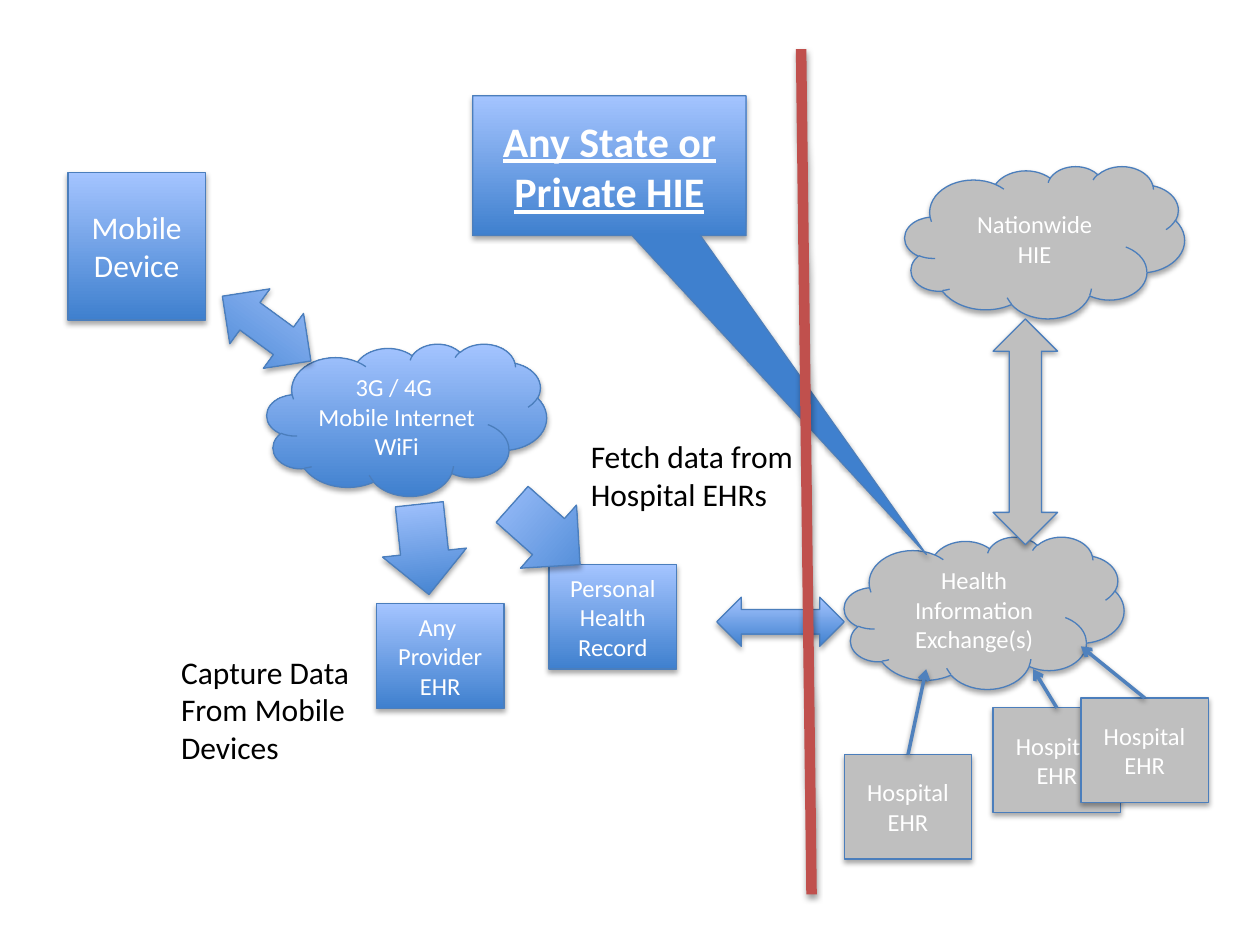
"""Build a slide that maps how mobile devices and hospitals share health records."""
from lxml.etree import SubElement
from pptx import Presentation
from pptx.dml.color import RGBColor
from pptx.enum.shapes import MSO_CONNECTOR as Link, MSO_SHAPE as Kind
from pptx.enum.text import MSO_ANCHOR as Anchor, MSO_AUTO_SIZE as Fit, PP_ALIGN as Align
from pptx.oxml.ns import qn
from pptx.util import Cm, Pt

WHITE = RGBColor(0xFF, 0xFF, 0xFF)
BLACK = RGBColor(0x00, 0x00, 0x00)
GRAY = RGBColor(0xBF, 0xBF, 0xBF)
DEEP = RGBColor(0x3F, 0x80, 0xCE)
PALE = RGBColor(0xA4, 0xC4, 0xFF)
EDGE = RGBColor(0x4B, 0x7E, 0xBC)
BLUE = RGBColor(0x4F, 0x81, 0xBD)
RED = RGBColor(0xC0, 0x50, 0x4D)

BOX = (2.57, 2.11)
CLOUD = (5.64, 3.07)
ARROW = (1.7, 1.83)


def write(frame, text, size=14, color=WHITE, align=Align.CENTER, bold=False, under=False):
    frame.text = text
    for para in frame.paragraphs:
        para.alignment = align
        font = para.runs[0].font
        font.name, font.size, font.color.rgb = "Calibri", Pt(size), color
        font.bold, font.underline = bold, under


def shade(item, alpha, dist):
    effects = SubElement(item._element.spPr, qn("a:effectLst"))
    outer = SubElement(effects, qn("a:outerShdw"), blurRad=str(Pt(3.15)), dist=str(Pt(dist)),
                       dir="5400000", rotWithShape="0")
    black = SubElement(outer, qn("a:srgbClr"), val="000000")
    SubElement(black, qn("a:alpha"), val=str(alpha * 1000))


class Chart:
    def __init__(self, slide):
        self.slide = slide

    def shape(self, kind, spot, area, text="", gray=False, turn=0, adjust=(), **style):
        item = self.slide.shapes.add_shape(kind, *map(Cm, spot + area))
        item.rotation = turn
        for i, value in enumerate(adjust):
            item.adjustments[i] = value
        if gray:
            item.fill.solid()
            item.fill.fore_color.rgb = GRAY
        else:
            item.fill.gradient()
            item.fill.gradient_angle = 90
            for stop, color, place in zip(item.fill.gradient_stops, (DEEP, PALE), (0, 1)):
                stop.color.rgb, stop.position = color, place
        item.line.color.rgb, item.line.width = EDGE, Pt(0.75)
        shade(item, 35, 1.8)
        if text:
            item.text_frame.vertical_anchor = Anchor.MIDDLE
            write(item.text_frame, text, **style)

    def box(self, spot, text, area=BOX, **style):
        self.shape(Kind.RECTANGLE, spot, area, text, **style)

    def cloud(self, spot, text, **style):
        self.shape(Kind.CLOUD, spot, CLOUD, text, **style)

    def arrow(self, spot, turn):
        self.shape(Kind.DOWN_ARROW, spot, ARROW, turn=turn, adjust=(0.57, 0.5))

    def label(self, spot, area, text):
        frame = self.slide.shapes.add_textbox(*map(Cm, spot + area)).text_frame
        frame.word_wrap, frame.auto_size = False, Fit.SHAPE_TO_FIT_TEXT
        write(frame, text, size=18, color=BLACK, align=Align.LEFT)

    def line(self, start, end, color, width, head=False):
        item = self.slide.shapes.add_connector(Link.STRAIGHT, *map(Cm, start + end))
        item.line.color.rgb, item.line.width = color, Pt(width)
        if head:
            SubElement(item.line._get_or_add_ln(), qn("a:tailEnd"), type="arrow")
        shade(item, 38, 1.6)


def main():
    deck = Presentation()
    deck.slide_width, deck.slide_height = Cm(25.4), Cm(19.05)
    chart = Chart(deck.slides.add_slide(deck.slide_layouts[6]))
    wards = {(20.02, 14.27): (20.83, 13.49),
             (21.79, 14.07): (21.79, 13.03),
             (17.02, 15.21): (18.67, 13.49)}

    chart.cloud((5.38, 6.93), "3G / 4G \nMobile Internet\nWiFi")
    chart.box((1.37, 3.48), "Mobile\nDevice", area=(2.77, 2.97), size=18)
    for spot in wards:
        chart.box(spot, "Hospital\nEHR", gray=True)
    chart.box((11.07, 11.38), "Personal\nHealth\nRecord")
    chart.arrow((10.16, 9.86), 311.6)
    chart.label((11.66, 8.69), (4.67, 1.8), "Fetch data from\nHospital EHRs")
    chart.label((3.4, 13.03), (3.96, 2.57), "Capture Data\nFrom Mobile\nDevices")

    chart.cloud((17.02, 10.82), "Health Information\nExchange(s)", gray=True)
    chart.cloud((18.24, 3.35), "Nationwide\nHIE", gray=True)
    for (left, top), end in wards.items():
        chart.line((left + BOX[0] / 2, top), end, BLUE, 2, head=True)
    chart.shape(Kind.LEFT_RIGHT_ARROW, (14.45, 12.04), (2.57, 0.99))
    chart.shape(Kind.UP_DOWN_ARROW, (20.02, 6.43), (1.3, 4.55), gray=True)

    chart.box((7.59, 12.17), "Any \nProvider\nEHR")
    chart.arrow((7.7, 10.16), 353.9)
    chart.shape(Kind.RECTANGULAR_CALLOUT, (9.53, 1.93), (5.51, 2.82), "Any State or Private HIE",
                adjust=(1.16, 2.78), size=24, bold=True, under=True)
    chart.shape(Kind.LEFT_RIGHT_ARROW, (4.27, 5.94), (2.21, 1.37), turn=36.2)
    chart.line((16.15, 0.99), (16.36, 18.03), RED, 6)
    deck.save("out.pptx")


if __name__ == "__main__":
    main()
